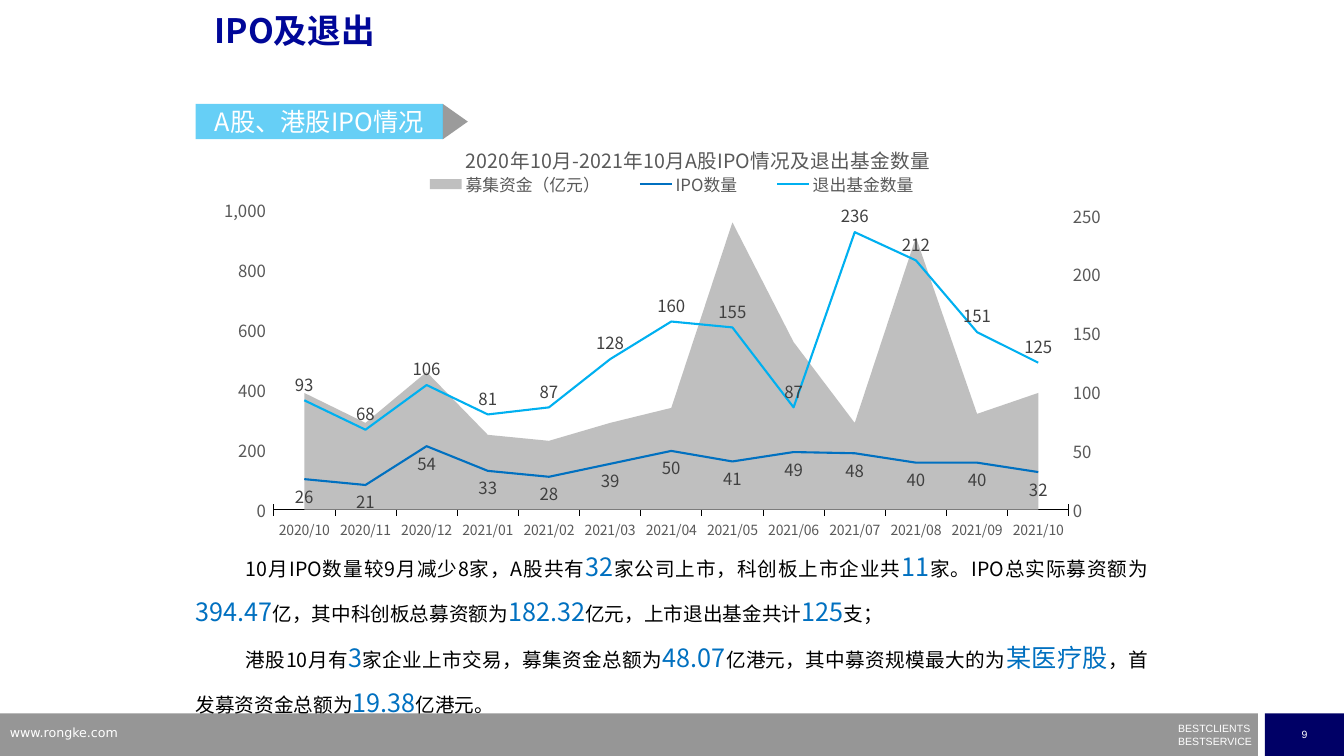
from copy import deepcopy
from dataclasses import dataclass

from pptx import Presentation
from pptx.chart.axis import CategoryAxis as CatAxis, ValueAxis as ValAxis
from pptx.chart.data import CategoryChartData as ChartData
from pptx.dml.color import RGBColor as RGB
from pptx.enum.chart import XL_CHART_TYPE as Kind, XL_LABEL_POSITION as Pos
from pptx.enum.chart import XL_LEGEND_POSITION as Key, XL_MARKER_STYLE as Mark
from pptx.enum.chart import XL_TICK_MARK as Tick
from pptx.enum.shapes import MSO_SHAPE as Form
from pptx.enum.text import MSO_ANCHOR as Anchor, PP_ALIGN as Align
from pptx.oxml import parse_xml
from pptx.oxml.ns import nsdecls, qn
from pptx.util import Cm, Pt


@dataclass(frozen=True)
class Theme:
    sans: str = "Noto Sans CJK SC"
    foot: str = "Arial"
    web: str = "DejaVu Sans"
    white: str = "FFFFFF"
    black: str = "000000"
    navy: str = "000066"
    title: str = "000798"
    blue: str = "0070C0"
    sky: str = "00B0F0"
    area: str = "BFBFBF"
    bar: str = "969696"
    dark: str = "595959"
    label: str = "404040"
    head: float = 24
    big: float = 18
    text: float = 14
    small: float = 12
    tick: float = 10
    site: float = 9
    tiny: float = 7.5


T = Theme()
MONTHS = [f"{2020 + m // 12}/{m % 12 + 1:02}" for m in range(9, 22)]
FUNDS = [390, 290, 460, 250, 230, 290, 340, 960, 560, 290, 910, 320, 390]
DEALS = [26, 21, 54, 33, 28, 39, 50, 41, 49, 48, 40, 40, 32]
EXITS = [93, 68, 106, 81, 87, 128, 160, 155, 87, 236, 212, 151, 125]
# Bars set off the figures that stand out
BODY = [
    "10月IPO数量较9月减少8家，A股共有|32|家公司上市，科创板上市企业共|11|家。"
    "IPO总实际募资额为|394.47|亿，其中科创板总募资额为|182.32|亿元，"
    "上市退出基金共计|125|支；",
    "港股10月有|3|家企业上市交易，募集资金总额为|48.07|亿港元，"
    "其中募资规模最大的为|某医疗股|，首发募资资金总额为|19.38|亿港元。",
]


def style(font, size, color, name=T.sans, bold=False):
    font.size, font.name, font.bold = Pt(size), name, bold
    font.color.rgb = RGB.from_string(color)


def paint(run, size, color, name=T.sans, bold=False):
    style(run.font, size, color, name, bold)
    if name == T.sans:
        east = parse_xml(f'<a:ea {nsdecls("a")} typeface="{name}"/>')
        run.font._element.find(qn("a:latin")).addnext(east)


def add_text(slide, box, text, size, color, name=T.sans, bold=False, pad=True):
    frame = slide.shapes.add_textbox(*map(Cm, box)).text_frame
    frame.word_wrap = True
    if not pad:
        frame.margin_left = frame.margin_right = 0
        frame.margin_top = frame.margin_bottom = 0
    frame.text = text
    for para in frame.paragraphs:
        for run in para.runs:
            paint(run, size, color, name, bold)
    return frame


def add_block(slide, form, box, color, alpha=100):
    shape = slide.shapes.add_shape(form, *map(Cm, box))
    shape.shadow.inherit = False
    shape.line.fill.background()
    shape.fill.solid()
    shape.fill.fore_color.rgb = RGB.from_string(color)
    if alpha < 100:
        tint = shape.fill._xPr.find(".//" + qn("a:srgbClr"))
        tint.append(parse_xml(f'<a:alpha {nsdecls("a")} val="{alpha * 1000}"/>'))
    return shape


def fill_block(shape, text, size, color, name=T.sans):
    frame = shape.text_frame
    frame.word_wrap = False
    frame.vertical_anchor = Anchor.MIDDLE
    frame.text = text
    frame.paragraphs[0].alignment = Align.CENTER
    paint(frame.paragraphs[0].runs[0], size, color, name)


def add_body(slide, box):
    frame = add_text(slide, box, "\n".join(BODY), T.text, T.black, pad=False)
    for para, text in zip(frame.paragraphs, BODY):
        para.text = ""
        para.alignment, para.line_spacing = Align.JUSTIFY, 1.5
        para._p.get_or_add_pPr().set("indent", str(Cm(1.27)))
        for i, part in enumerate(text.split("|")):
            run = para.add_run()
            run.text = part
            paint(run, *((T.big, T.blue) if i % 2 else (T.text, T.black)))


def place(node, index, **spots):
    """Fix a chart part at fractions of the chart frame."""
    for old in node.findall(qn("c:layout")):
        node.remove(old)
    inner = '<c:layoutTarget val="inner"/>' if index == 0 else ""
    modes = '<c:xMode val="edge"/><c:yMode val="edge"/>'
    sides = "".join(f'<c:{k} val="{v}"/>' for k, v in spots.items())
    node.insert(index, parse_xml(
        f'<c:layout {nsdecls("c")}><c:manualLayout>{inner}{modes}{sides}'
        "</c:manualLayout></c:layout>"))


def set_axes(chart):
    cat, val = chart.category_axis, chart.value_axis
    style(cat.tick_labels.font, T.tick, T.dark)
    cat.major_tick_mark = Tick.CROSS
    cat.format.line.width = Pt(0.5)
    cat.format.line.color.rgb = RGB.from_string(T.black)
    style(val.tick_labels.font, T.small, T.dark)
    val.tick_labels.number_format = r"#,##0_);[Red]\(#,##0\)"
    val.tick_labels.number_format_is_linked = False
    val.minimum_scale, val.maximum_scale, val.major_unit = 0, 1100, 200
    val.major_tick_mark = Tick.NONE
    val.format.line.fill.background()
    cat.has_major_gridlines = val.has_major_gridlines = False
    val._element.find(qn("c:crossBetween")).set("val", "between")


def split_lines(chart):
    """Move all but the first series to lines on a right-hand axis."""
    area = chart.plots[0]._element
    lines = parse_xml(
        f'<c:lineChart {nsdecls("c")}><c:grouping val="standard"/>'
        '<c:varyColors val="0"/><c:marker val="1"/>'
        '<c:axId val="501"/><c:axId val="502"/></c:lineChart>')
    for ser in area.findall(qn("c:ser"))[1:]:
        lines.find(qn("c:marker")).addprevious(ser)
    area.addnext(lines)

    cat, val = chart.category_axis._element, chart.value_axis._element
    low, right = deepcopy(cat), deepcopy(val)
    for node, own, other in ((low, "501", "502"), (right, "502", "501")):
        node.find(qn("c:axId")).set("val", own)
        node.find(qn("c:crossAx")).set("val", other)
    right.find(qn("c:axPos")).set("val", "r")
    right.find(qn("c:crosses")).set("val", "max")
    val.addnext(right)
    right.addnext(low)
    CatAxis(low).visible = False
    axis = ValAxis(right)
    axis.maximum_scale, axis.major_unit = 280, 50
    axis.tick_labels.number_format = "General"


def add_combo(slide, box):
    data = ChartData()
    data.categories = MONTHS
    for name, vals in (("募集资金（亿元）", FUNDS), ("IPO数量", DEALS),
                       ("退出基金数量", EXITS)):
        data.add_series(name, vals)
    chart = slide.shapes.add_chart(Kind.AREA, *map(Cm, box), data).chart
    style(chart.font, T.small, T.black)
    chart.plots[0].vary_by_categories = False
    set_axes(chart)
    split_lines(chart)

    # Series looks
    fill = chart.plots[0].series[0].format.fill
    fill.solid()
    fill.fore_color.rgb = RGB.from_string(T.area)
    looks = ((T.blue, Pos.BELOW), (T.sky, Pos.ABOVE))
    for ser, (color, pos) in zip(chart.plots[1].series, looks):
        ser.smooth, ser.marker.style = False, Mark.NONE
        ser.format.line.width = Pt(1.5)
        ser.format.line.color.rgb = RGB.from_string(color)
        tags = ser.data_labels
        tags.show_value, tags.position = True, pos
        style(tags.font, T.small, T.label)

    # Title, legend and plot places
    chart.has_title = chart.has_legend = True
    para = chart.chart_title.text_frame.paragraphs[0]
    para.text = "2020年10月-2021年10月A股IPO情况及退出基金数量"
    paint(para.runs[0], T.text, T.dark)
    chart.legend.position = Key.CORNER
    chart.legend.include_in_layout = False
    style(chart.legend.font, T.small, T.dark)
    place(chart.chart_title._element, 1, x=0.28, y=0.02)
    place(chart.legend._element, 1, x=0.21, y=0.09, w=0.58, h=0.08)
    plot = chart.plots[0]._element.getparent()
    place(plot, 0, x=0.082, y=0.121, w=0.835, h=0.805)


def add_footer(slide):
    add_block(slide, Form.RECTANGLE, (0, 17.98, 31.7, 1.07), T.bar)
    page = add_block(slide, Form.RECTANGLE, (31.88, 17.98, 1.99, 1.07), T.navy)
    fill_block(page, "9", T.tiny, T.white, T.foot)
    motto = add_text(slide, (29.69, 18.34, 1.93, 0.51),
                     "BESTCLIENTS\nBESTSERVICE", T.tiny, T.white, T.foot, pad=False)
    for para in motto.paragraphs:
        para.line_spacing = 0.5
    motto.paragraphs[1].space_before = Pt(4.5)
    add_text(slide, (0, 18.14, 8.13, 0.66), "www.rongke.com", T.site, T.white, T.web)


def main():
    deck = Presentation()
    deck.slide_width, deck.slide_height = Cm(33.87), Cm(19.05)
    slide = deck.slides.add_slide(deck.slide_layouts[6])
    add_footer(slide)
    # Section tag
    tag = add_block(slide, Form.RECTANGLE, (4.93, 2.62, 6.23, 0.89), T.sky, 60)
    fill_block(tag, "A股、港股IPO情况", T.big, T.white)
    tip = add_block(slide, Form.ISOSCELES_TRIANGLE, (11.03, 2.75, 0.89, 0.63), T.dark, 60)
    tip.rotation = 90
    # Body, title and chart
    add_body(slide, (4.93, 13.51, 24, 4.5))
    head = add_text(slide, (5.16, 0.23, 22.86, 1.78), "IPO及退出", T.head, T.title, bold=True)
    head.paragraphs[0].line_spacing = 0.9
    add_combo(slide, (4.93, 3.3, 24, 10.31))
    deck.save("out.pptx")


if __name__ == "__main__":
    main()
